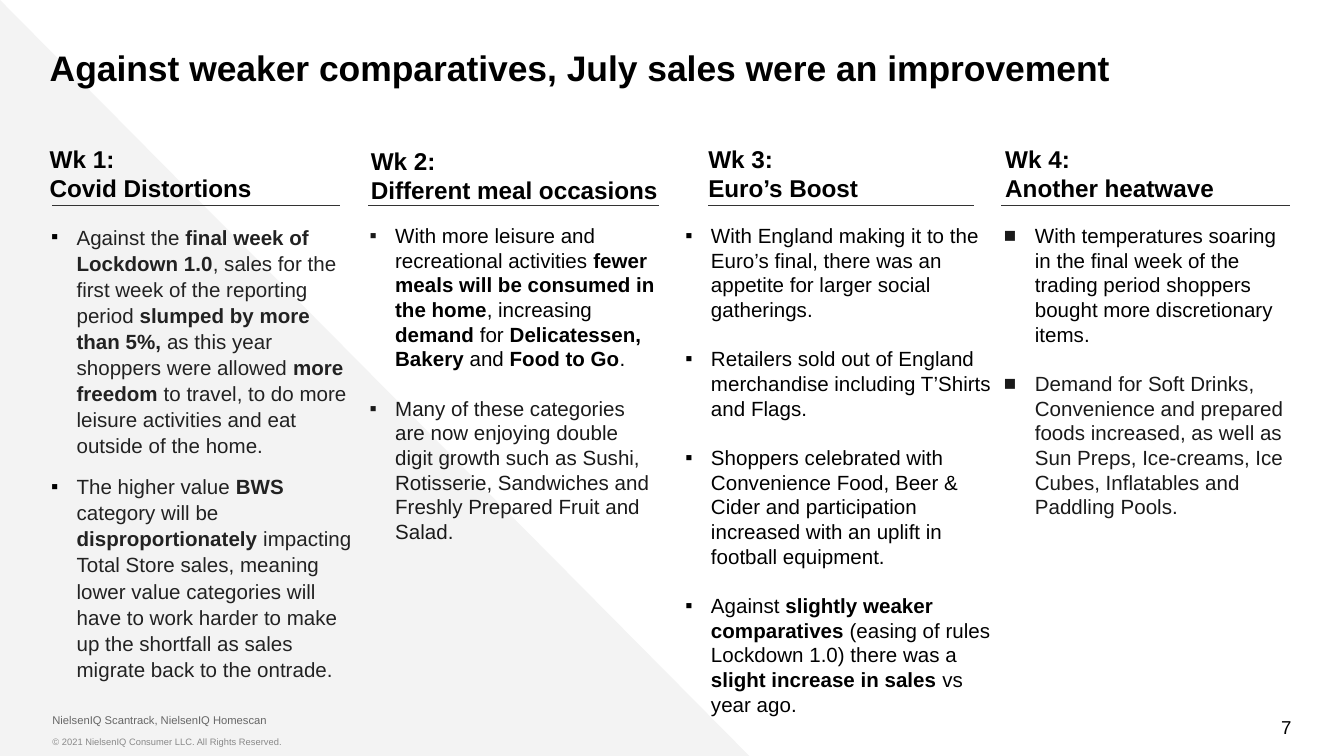
from dataclasses import dataclass

from lxml import etree
from pptx import Presentation
from pptx import util as u
from pptx.dml.color import RGBColor
from pptx.enum import shapes, text
from pptx.oxml import ns

BLACK = RGBColor(0x00, 0x00, 0x00)
INK = RGBColor(0x1A, 0x1A, 0x1A)
CHARCOAL = RGBColor(0x22, 0x22, 0x22)
RULE = RGBColor(0x33, 0x33, 0x33)
SOURCE = RGBColor(0x66, 0x66, 0x66)
LEGAL = RGBColor(0x88, 0x88, 0x88)
PALE = RGBColor(0xF3, 0xF3, 0xF3)
FONT = "Arial"
RULE_Y = 1.53
BODY_Y = 1.61


@dataclass
class Bullet:
    char: str
    color: RGBColor
    margin: float
    hang: float


@dataclass
class Week:
    heading: str
    heading_box: tuple[float, float, float, float]
    rule: tuple[float, float]
    body_box: tuple[float, float, float, float]
    bullet: Bullet
    items: list[tuple[str, RGBColor]]
    gap: float = 13.2
    spacing: float = 1.0


WEEKS = [
    Week("Wk 1:\nCovid Distortions", (0.37, 1.18, 2.18, 0.43), (0.39, 2.53),
         (-0.12, BODY_Y, 2.74, 3.3), Bullet("▪", BLACK, 0.69, 0.19), [
             ("Against the **final week of Lockdown 1.0**, sales for the first week of the "
              "reporting period **slumped by more than 5%,** as this year shoppers were allowed "
              "**more freedom **to travel, to do more leisure activities and eat outside of "
              "the home.", CHARCOAL),
             ("The higher value **BWS** category will be **disproportionately** impacting Total "
              "Store sales, meaning lower value categories will have to work harder to make up "
              "the shortfall as sales migrate back to the ontrade.", CHARCOAL),
         ], gap=8, spacing=1.06),
    Week("Wk 2:\nDifferent meal occasions", (2.76, 1.19, 2.54, 0.43), (2.74, 4.9),
         (2.74, BODY_Y, 2.15, 3.3), Bullet("▪", INK, 0.2, 0.19), [
             ("With more leisure and recreational activities **fewer meals will be consumed in "
              "the home**, increasing **demand **for **Delicatessen, Bakery **and "
              "**Food to Go**.", BLACK),
             ("Many of these categories are now enjoying double digit growth such as Sushi, "
              "Rotisserie, Sandwiches and Freshly Prepared Fruit and Salad.", INK),
         ]),
    Week("Wk 3:\nEuro’s Boost", (5.27, 1.18, 2.35, 0.43), (5.27, 7.25),
         (5.1, BODY_Y, 2.34, 3.58), Bullet("▪", BLACK, 0.19, 0.19), [
             ("With England making it to the Euro’s final, there was an appetite for larger "
              "social gatherings.", BLACK),
             ("Retailers sold out of England merchandise including T’Shirts and Flags.", BLACK),
             ("Shoppers celebrated with Convenience Food, Beer & Cider and participation "
              "increased with an uplift in football equipment.", BLACK),
             ("Against **slightly weaker comparatives **(easing of rules Lockdown 1.0) there "
              "was a **slight increase in sales **vs year ago.", BLACK),
         ]),
    Week("Wk 4:\nAnother heatwave", (7.48, 1.18, 2.54, 0.43), (7.45, 9.6),
         (7.45, BODY_Y, 2.15, 3.58), Bullet("■", INK, 0.25, 0.23), [
             ("With temperatures soaring in the final week of the trading period shoppers "
              "bought more discretionary items.", BLACK),
             ("Demand for Soft Drinks, Convenience and prepared foods increased, as well as "
              "Sun Preps, Ice-creams, Ice Cubes, Inflatables and Paddling Pools.", INK),
         ]),
]


def place(sp, box: tuple[float, float, float, float], inset: float,
          anchor=text.MSO_ANCHOR.TOP):
    sp.left, sp.top, sp.width, sp.height = map(u.Inches, box)
    tf = sp.text_frame
    tf.word_wrap = True
    tf.auto_size = text.MSO_AUTO_SIZE.NONE
    tf.vertical_anchor = anchor
    tf.margin_left = tf.margin_right = 0
    tf.margin_top = tf.margin_bottom = u.Inches(inset)
    return tf


def write(p, content: str, *, size: float, color: RGBColor, bold: bool = False,
          align=text.PP_ALIGN.LEFT, spacing: float = 1.0, before: float = 0) -> None:
    p.alignment = align
    p.line_spacing = spacing
    p.space_before = u.Pt(before)
    p.space_after = u.Pt(0)
    for i, part in enumerate(content.split("**")):
        if part:
            r = p.add_run()
            r.text = part
            r.font.name = FONT
            r.font.size = u.Pt(size)
            r.font.bold = bold or i % 2 == 1
            r.font.color.rgb = color


def add_text(s, box: tuple[float, float, float, float], content: str, *, inset: float = 0.05,
             anchor=text.MSO_ANCHOR.TOP, **style) -> None:
    tf = place(s.shapes.add_textbox(0, 0, 0, 0), box, inset, anchor)
    for i, line in enumerate(content.split("\n")):
        write(tf.add_paragraph() if i else tf.paragraphs[0], line, **style)


def set_bullet(p, bullet: Bullet) -> None:
    pPr = p._p.get_or_add_pPr()
    pPr.set("marL", str(u.Inches(bullet.margin)))
    pPr.set("indent", str(-u.Inches(bullet.hang)))
    clr = etree.SubElement(pPr, ns.qn("a:buClr"))
    etree.SubElement(clr, ns.qn("a:srgbClr"), val=str(bullet.color))
    etree.SubElement(pPr, ns.qn("a:buFont"), typeface=FONT)
    etree.SubElement(pPr, ns.qn("a:buChar"), char=bullet.char)


def add_rule(s, start: float, end: float) -> None:
    y = u.Inches(RULE_Y)
    line = s.shapes.add_connector(shapes.MSO_CONNECTOR.STRAIGHT,
                                  u.Inches(start), y, u.Inches(end), y)
    line.line.color.rgb = RULE
    line.line.width = u.Pt(0.75)
    etree.SubElement(line._element.spPr, ns.qn("a:effectLst"))


def add_week(s, week: Week, body) -> None:
    add_rule(s, *week.rule)
    add_text(s, week.heading_box, week.heading, inset=0.1, anchor=text.MSO_ANCHOR.BOTTOM,
             size=13, color=BLACK, bold=True)
    tf = place(body, week.body_box, 0.05)
    for i, (content, color) in enumerate(week.items):
        p = tf.add_paragraph() if i else tf.paragraphs[0]
        set_bullet(p, week.bullet)
        write(p, content, size=11, color=color, spacing=week.spacing,
              before=week.gap if i else 0)


def add_backdrop(s) -> None:
    sp = s.shapes.add_shape(shapes.MSO_SHAPE.RIGHT_TRIANGLE, 0, 0,
                            u.Inches(5.59), u.Inches(5.64))
    sp.shadow.inherit = False
    sp.fill.solid()
    sp.fill.fore_color.rgb = PALE
    sp.line.fill.background()
    s.shapes._spTree.insert(2, sp._element)


def main() -> None:
    prs = Presentation()
    prs.slide_width = u.Inches(10)
    prs.slide_height = prs.slide_width * 9 // 16
    s = prs.slides.add_slide(prs.slide_layouts.get_by_name("Comparison"))
    add_backdrop(s)
    title, *bodies = s.placeholders
    tf = place(title, (0.37, 0.24, 9.22, 0.43), 0.1)
    write(tf.paragraphs[0], "Against weaker comparatives, July sales were an improvement",
          size=19, color=BLACK, bold=True)
    for week, body in zip(WEEKS, bodies):
        add_week(s, week, body)
    add_text(s, (0.39, 5.31, 8.92, 0.2), "NielsenIQ Scantrack, NielsenIQ Homescan",
             inset=0.1, anchor=text.MSO_ANCHOR.BOTTOM, size=6, color=SOURCE)
    add_text(s, (0.39, 5.43, 5.54, 0.2), "© 2021 NielsenIQ Consumer LLC. All Rights Reserved.",
             size=5, color=LEGAL)
    add_text(s, (7.36, 5.26, 2.25, 0.3), "7", anchor=text.MSO_ANCHOR.MIDDLE,
             size=10, color=BLACK, align=text.PP_ALIGN.RIGHT)
    prs.save("out.pptx")


if __name__ == "__main__":
    main()
